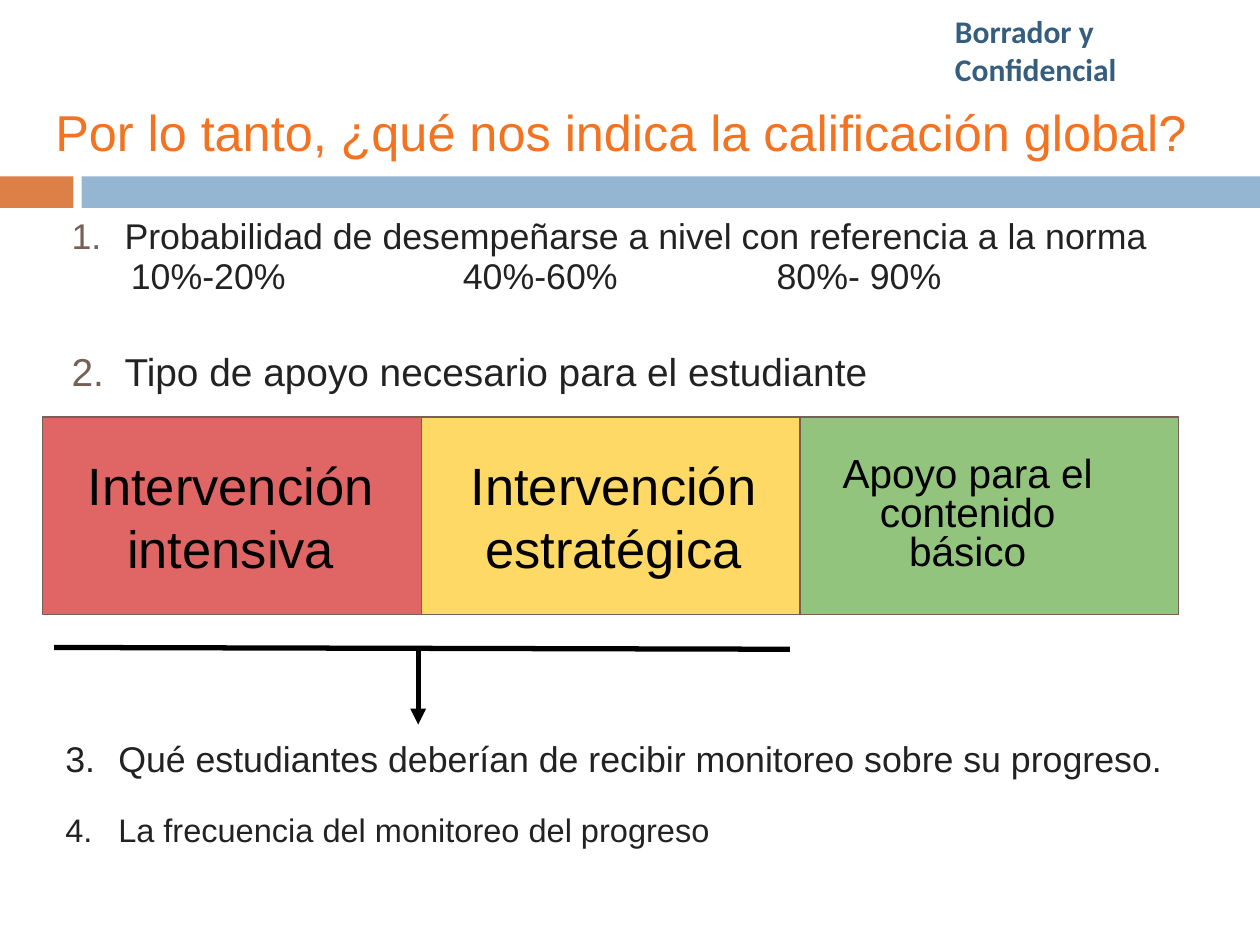
from dataclasses import dataclass, field
from typing import Optional

from lxml.etree import SubElement
from pptx import Presentation
from pptx.dml.color import RGBColor
from pptx.enum.shapes import MSO_CONNECTOR, MSO_SHAPE
from pptx.enum.text import MSO_ANCHOR, PP_ALIGN
from pptx.oxml.ns import qn
from pptx.util import Pt

INK, BROWN, BLACK = "222222", "775F55", "000000"
INSET = 7.2
LIST_LEFT, LIST_HANGING = 36, -30.24
PERCENT_STOPS = (39.6, 229.3, 408.6)
BAND_LEFT, BAND_TOP, BAND_WIDTH, BAND_HEIGHT = 24.4, 238.3, 216.4, 113


@dataclass
class Line:
    """One paragraph with an optional list number or tab stops."""
    text: str
    size: float
    color: str = INK
    font: str = "Arial"
    bold: bool = False
    align: PP_ALIGN = PP_ALIGN.LEFT
    spacing: float = 1.0
    number: Optional[int] = None
    number_color: str = INK
    stops: tuple = ()


@dataclass
class TextBlock:
    """A text box and its paragraphs."""
    left: float
    top: float
    width: float
    height: float
    lines: list = field(default_factory=list)
    top_inset: float = INSET
    anchor: MSO_ANCHOR = MSO_ANCHOR.TOP


@dataclass
class Band:
    """One support level in the coloured row."""
    text: str
    fill: str
    text_left: float
    text_width: float
    size: float = 30
    spacing: float = 1.0


TEXTS = [
    TextBlock(538.6, 3.6, 181.4, 50, [
        Line("Borrador y Confidencial", 18, "355D7E", "Calibri", True)], 3.6),
    TextBlock(24.5, 47.5, 671, 59.8, [
        Line("Por lo tanto, ¿qué nos indica la calificación global?", 28.8, "F37321")], 10.4),
    TextBlock(28.1, 116.6, 642.2, 59.8, [
        Line("Probabilidad de desempeñarse a nivel con referencia a la norma", 20.4,
             spacing=0.95, number=1, number_color=BROWN),
        Line("\t10%-20%\t40%-60%\t80%- 90%", 20.4, spacing=0.95, stops=PERCENT_STOPS)]),
    TextBlock(28.1, 190.1, 642.2, 59.8, [
        Line("Tipo de apoyo necesario para el estudiante", 22.2,
             spacing=1.05, number=2, number_color=BROWN)]),
    TextBlock(24.5, 412.6, 671, 54, [
        Line("Qué estudiantes deberían de recibir monitoreo sobre su progreso.", 20.4,
             spacing=1.05, number=3)]),
    TextBlock(24.5, 442.1, 671, 58.3, [
        Line("La frecuencia del monitoreo del progreso", 18.6, spacing=0.95, number=4)], 31.2),
]

BANDS = [
    Band("Intervención intensiva", "E06666", 38.9, 185.8),
    Band("Intervención estratégica", "FFD966", 259.9, 181.4),
    Band("Apoyo para el contenido básico", "93C47D", 471.6, 162.7, 23.2, 0.8),
]


def rgb(value: str) -> RGBColor:
    """Turn a hex string into a colour."""
    return RGBColor.from_string(value)


def apply(target, values: dict) -> None:
    """Set every attribute named in the values."""
    for name, value in values.items():
        setattr(target, name, value)


def draw_rectangle(slide, left: float, top: float, width: float, height: float,
                   fill: str, outline: Optional[str] = None) -> None:
    """Draw a filled rectangle, outlined when a colour is given."""
    shape = slide.shapes.add_shape(MSO_SHAPE.RECTANGLE, Pt(left), Pt(top), Pt(width), Pt(height))
    shape.shadow.inherit = False
    shape.fill.solid()
    shape.fill.fore_color.rgb = rgb(fill)
    if outline:
        shape.line.color.rgb = rgb(outline)
        shape.line.width = Pt(0.75)
    else:
        shape.line.fill.background()


def add_number(paragraph, line: Line) -> None:
    """Give a paragraph a coloured automatic number and a hanging indent."""
    properties = paragraph._p.get_or_add_pPr()
    properties.set("marL", str(Pt(LIST_LEFT)))
    properties.set("indent", str(Pt(LIST_HANGING)))
    color = SubElement(properties, qn("a:buClr"))
    SubElement(color, qn("a:srgbClr"), val=line.number_color)
    SubElement(properties, qn("a:buFont"), typeface="Arial")
    SubElement(properties, qn("a:buAutoNum"), type="arabicPeriod", startAt=str(line.number))


def add_stops(paragraph, stops: tuple) -> None:
    """Give a paragraph left tab stops."""
    tabs = SubElement(paragraph._p.get_or_add_pPr(), qn("a:tabLst"))
    for stop in stops:
        SubElement(tabs, qn("a:tab"), pos=str(Pt(stop)), algn="l")


def draw_text(slide, block: TextBlock) -> None:
    """Draw a text box with its paragraphs."""
    shape = slide.shapes.add_textbox(Pt(block.left), Pt(block.top), Pt(block.width), Pt(block.height))
    frame = shape.text_frame
    apply(frame, {
        "word_wrap": True, "vertical_anchor": block.anchor,
        "margin_left": Pt(INSET), "margin_right": Pt(INSET),
        "margin_top": Pt(block.top_inset), "margin_bottom": Pt(INSET)})
    for index, line in enumerate(block.lines):
        paragraph = frame.add_paragraph() if index else frame.paragraphs[0]
        apply(paragraph, {"alignment": line.align, "line_spacing": line.spacing})
        if line.number:
            add_number(paragraph, line)
        if line.stops:
            add_stops(paragraph, line.stops)
        run = paragraph.add_run()
        run.text = line.text
        apply(run.font, {"name": line.font, "size": Pt(line.size), "bold": line.bold})
        run.font.color.rgb = rgb(line.color)


def draw_line(slide, start: tuple, end: tuple, arrow: bool = False) -> None:
    """Draw a thick black line, with an arrowhead at its end if asked."""
    connector = slide.shapes.add_connector(
        MSO_CONNECTOR.STRAIGHT, *(Pt(value) for value in start + end))
    connector.line.color.rgb = rgb(BLACK)
    connector.line.width = Pt(3)
    if arrow:
        SubElement(connector.line._get_or_add_ln(), qn("a:tailEnd"), type="triangle")
    SubElement(connector._element.spPr, qn("a:effectLst"))


def main() -> None:
    """Build the slide and save it."""
    presentation = Presentation()
    apply(presentation, {"slide_width": Pt(720), "slide_height": Pt(540)})
    slide = presentation.slides.add_slide(presentation.slide_layouts[6])
    draw_rectangle(slide, 0, 100.8, 42, 18, "DD8047")
    draw_rectangle(slide, 46.6, 100.8, 673.4, 18, "94B6D2")
    for index, band in enumerate(BANDS):
        draw_rectangle(slide, BAND_LEFT + index * BAND_WIDTH, BAND_TOP,
                       BAND_WIDTH, BAND_HEIGHT, band.fill, BROWN)
        line = Line(band.text, band.size, BLACK, align=PP_ALIGN.CENTER, spacing=band.spacing)
        draw_text(slide, TextBlock(band.text_left, 250.6, band.text_width, 88.6, [line],
                                   anchor=MSO_ANCHOR.MIDDLE))
    for block in TEXTS:
        draw_text(slide, block)
    draw_line(slide, (31, 370), (451.4, 371))
    draw_line(slide, (239, 371), (239, 414), arrow=True)
    presentation.save("out.pptx")


if __name__ == "__main__":
    main()
